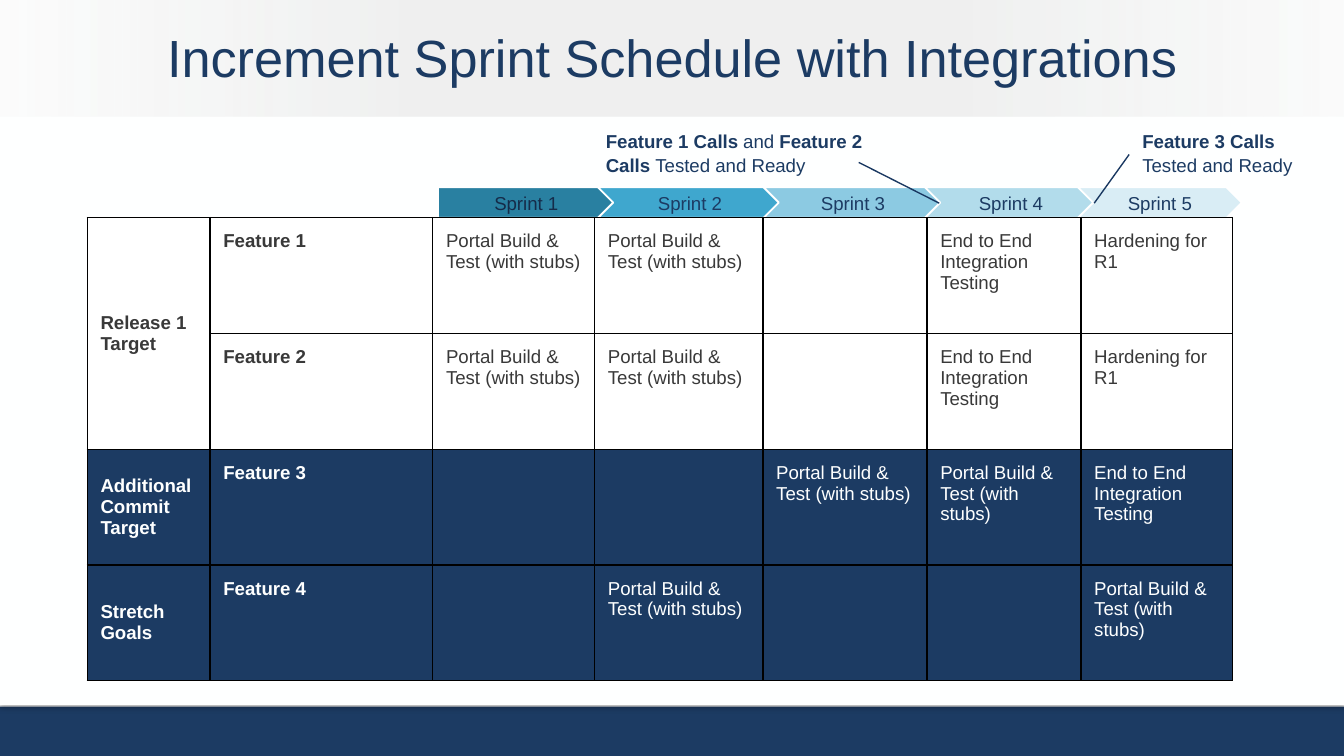
from lxml import etree
from pptx import Presentation
from pptx import util as u
from pptx.dml import color
from pptx.enum import shapes, text
from pptx.oxml import ns

NAVY, PAPER, INK = "1C3B63", "FEFFFF", "393939"
INSET = 0.25
BUILD = "Portal Build & Test (with stubs)"
END_TO_END = "End to End Integration Testing"
HARDENING = "Hardening for R1"

COLUMN_WIDTHS = [2.32, 4.21, 3.06, 3.18, 3.1, 2.91, 2.87]
ROW_HEIGHT = 2.19
# target, feature, then one entry per sprint
SCHEDULE = [
    ["Release 1 Target", "Feature 1", BUILD, BUILD, "", END_TO_END, HARDENING],
    ["", "Feature 2", BUILD, BUILD, "", END_TO_END, HARDENING],
    ["Additional Commit Target", "Feature 3", "", "", BUILD, BUILD, END_TO_END],
    ["Stretch Goals", "Feature 4", "", BUILD, "", "", BUILD],
]
RELEASE_ROWS = 2

# left, width, fill, text colour
SPRINTS = [
    (8.28, 3.48, "2980A1", "152C4A"),
    (11.3, 3.48, "3FA7CE", NAVY),
    (14.43, 3.38, "8CCAE2", NAVY),
    (17.48, 3.25, "B2DCEB", NAVY),
    (20.37, 3.1, "D9EDF5", NAVY),
]


def rgb(value):
    return color.RGBColor.from_string(value)


def set_all(target, values):
    for name, value in values.items():
        setattr(target, name, value)


def add_xml(parent, tag, **attributes):
    return etree.SubElement(parent, ns.qn(tag), attributes)


def write(frame, paragraphs, size=10, ink=NAVY, align=None, spacing=None):
    """Fill a text frame; each paragraph is a list of (words, bold) spans."""
    frame.word_wrap = True
    for index, spans in enumerate(paragraphs):
        para = frame.add_paragraph() if index else frame.paragraphs[0]
        set_all(para, {"alignment": align, "line_spacing": spacing})
        for words, bold in spans:
            span = para.add_run()
            span.text = words
            set_all(span.font, {"name": "Arial", "size": u.Pt(size), "bold": bold})
            span.font.color.rgb = rgb(ink)


def add_text(page, place, paragraphs, anchor=text.MSO_ANCHOR.TOP, **style):
    box = page.shapes.add_textbox(*map(u.Cm, place))
    box.text_frame.vertical_anchor = anchor
    write(box.text_frame, paragraphs, **style)


def add_block(page, kind, place, fill, line=None, line_width=1):
    block = page.shapes.add_shape(kind, *map(u.Cm, place))
    block.shadow.inherit = False
    block.fill.solid()
    block.fill.fore_color.rgb = rgb(fill)
    if line:
        block.line.color.rgb = rgb(line)
        block.line.width = u.Pt(line_width)
    else:
        block.line.fill.background()
    return block


def add_shadow(block):
    effects = block._element.spPr.find(ns.qn("a:effectLst"))
    shadow = add_xml(effects, "a:outerShdw", blurRad=str(u.Pt(3.1)),
                     dist=str(u.Pt(1.8)), dir="5400000", rotWithShape="0")
    tint = add_xml(shadow, "a:srgbClr", val="000000")
    add_xml(tint, "a:alpha", val="35000")


def fade(block, tone, stops):
    """Give a block a horizontal gradient of (position %, opacity %) stops."""
    block.fill.gradient()
    block.fill.gradient_angle = 180
    stop_list = block._element.spPr.find(".//" + ns.qn("a:gsLst"))
    for old in list(stop_list):
        stop_list.remove(old)
    for position, opacity in stops:
        stop = add_xml(stop_list, "a:gs", pos=str(position * 1000))
        tint = add_xml(stop, "a:srgbClr", val=tone)
        add_xml(tint, "a:alpha", val=str(opacity * 1000))


def add_backdrop(page):
    rectangle = shapes.MSO_SHAPE.RECTANGLE
    page.background.fill.solid()
    page.background.fill.fore_color.rgb = rgb(PAPER)
    add_block(page, rectangle, (0, 13.36, 25.4, 0.93), NAVY)
    add_shadow(add_block(page, rectangle, (0, 0, 25.4, 13.31), PAPER, PAPER, 0.75))
    header = add_block(page, rectangle, (0, 0, 25.4, 2.21), PAPER)
    fade(header, "C4C5C4", [(0, 6), (29, 25), (69, 25), (99, 5)])


def add_sprints(page):
    for number, (left, width, fill, ink) in enumerate(SPRINTS, 1):
        kind = shapes.MSO_SHAPE.PENTAGON if number == 1 else shapes.MSO_SHAPE.CHEVRON
        arrow = add_block(page, kind, (left, 3.54, width, 0.58), fill, "FFFFFF")
        frame = arrow.text_frame
        frame.vertical_anchor = text.MSO_ANCHOR.MIDDLE
        set_all(frame, {"margin_" + side: u.Cm(INSET)
                        for side in ("left", "right", "top", "bottom")})
        write(frame, [[(f"Sprint {number}", False)]], ink=ink,
              align=text.PP_ALIGN.CENTER)


def add_borders(cell):
    properties = cell._tc.get_or_add_tcPr()
    for index, tag in enumerate(("a:lnL", "a:lnR", "a:lnT", "a:lnB")):
        border = etree.Element(ns.qn(tag), w=str(u.Pt(0.75)))
        add_xml(add_xml(border, "a:solidFill"), "a:srgbClr", val="000000")
        properties.insert(index, border)


def add_schedule(page):
    place = (1.65, 4.11, sum(COLUMN_WIDTHS), ROW_HEIGHT * len(SCHEDULE))
    table = page.shapes.add_table(len(SCHEDULE), len(COLUMN_WIDTHS),
                                  *map(u.Cm, place)).table
    set_all(table, {"first_row": False, "horz_banding": False})
    for column, width in zip(table.columns, COLUMN_WIDTHS):
        column.width = u.Cm(width)
    for row_index, entries in enumerate(SCHEDULE):
        table.rows[row_index].height = u.Cm(ROW_HEIGHT)
        in_release = row_index < RELEASE_ROWS
        fill, ink = ("FFFFFF", INK) if in_release else (NAVY, PAPER)
        for column_index, words in enumerate(entries):
            cell = table.cell(row_index, column_index)
            set_all(cell, {"margin_" + side: u.Cm(INSET)
                           for side in ("left", "right", "top", "bottom")})
            if column_index == 0:
                cell.vertical_anchor = text.MSO_ANCHOR.MIDDLE
            cell.fill.solid()
            cell.fill.fore_color.rgb = rgb(fill)
            add_borders(cell)
            if words:
                write(cell.text_frame, [[(words, column_index < 2)]], ink=ink)
    table.cell(0, 0).merge(table.cell(RELEASE_ROWS - 1, 0))


def add_pointer(page, *ends):
    pointer = page.shapes.add_connector(shapes.MSO_CONNECTOR.STRAIGHT,
                                        *map(u.Cm, ends))
    pointer.line.color.rgb = rgb("193861")
    pointer.line.width = u.Pt(0.75)
    add_xml(pointer._element.spPr, "a:effectLst")


def main():
    deck = Presentation()
    set_all(deck, {"slide_width": u.Cm(25.4), "slide_height": u.Cm(14.29)})
    page = deck.slides.add_slide(deck.slide_layouts[6])
    add_backdrop(page)
    add_text(page, (0, 0.41, 25.4, 1.32),
             [[("Increment Sprint Schedule with Integrations", False)]],
             anchor=text.MSO_ANCHOR.MIDDLE, size=28, align=text.PP_ALIGN.CENTER)
    add_text(page, (21.34, 2.31, 3.38, 1.22),
             [[("Feature 3 Calls", True)], [("Tested and Ready", False)]],
             spacing=1.07)
    add_text(page, (11.2, 2.31, 5.66, 0.94),
             [[("Feature 1 Calls ", True), ("and ", False),
               ("Feature 2 Calls ", True), ("Tested and Ready", False)]],
             spacing=1.07)
    add_sprints(page)
    add_schedule(page)
    add_pointer(page, 17.75, 3.84, 16.23, 3.07)
    add_pointer(page, 20.68, 3.84, 21.34, 2.92)
    deck.save("out.pptx")


if __name__ == "__main__":
    main()
